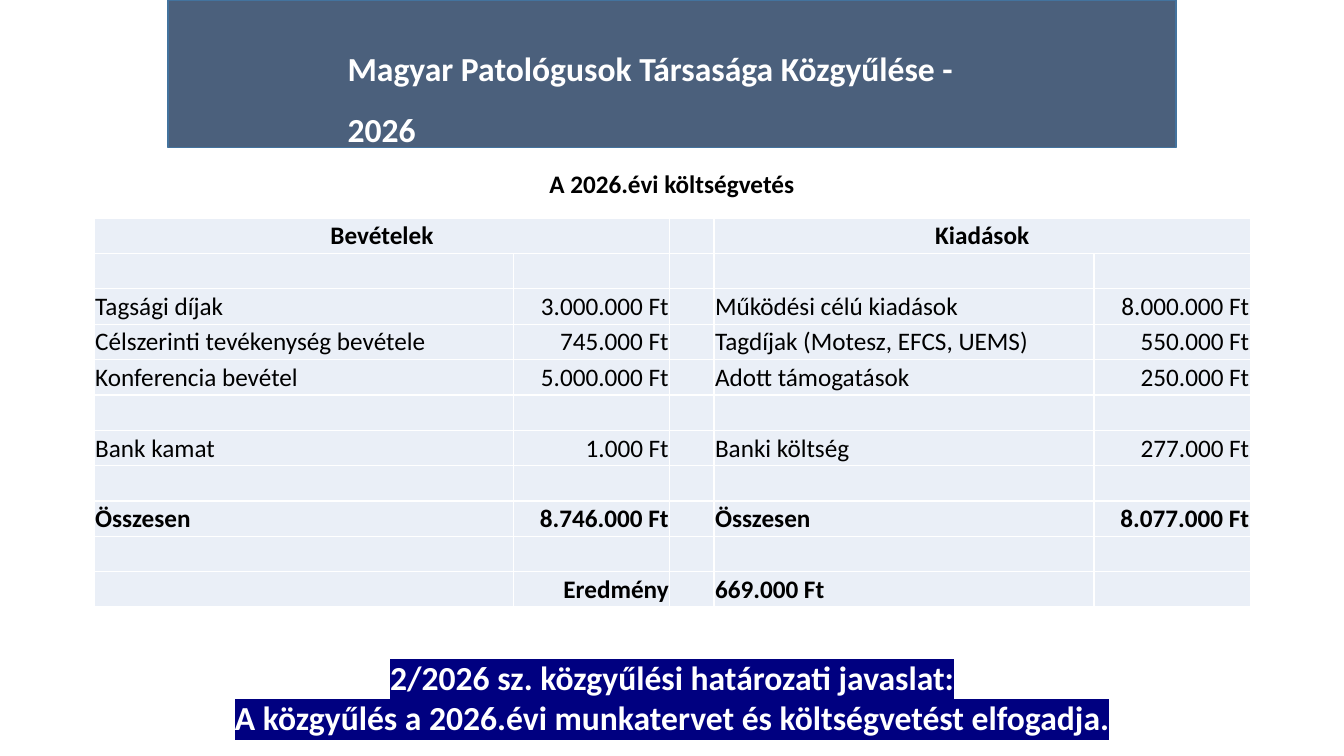
from lxml.etree import SubElement, Element
from pptx import Presentation
from pptx.dml.color import RGBColor
from pptx.enum.shapes import MSO_SHAPE as Preset
from pptx.enum.text import MSO_ANCHOR as Anchor, MSO_AUTO_SIZE as AutoSize, PP_ALIGN as Align
from pptx.oxml.ns import qn
from pptx.util import Pt

WHITE = RGBColor(0xFF, 0xFF, 0xFF)
BLACK = RGBColor(0x00, 0x00, 0x00)
SLATE = RGBColor(0x4B, 0x60, 0x7C)
BLUE_EDGE = RGBColor(0x43, 0x73, 0x9E)
PALE_BLUE = RGBColor(0xEA, 0xEF, 0xF7)
NAVY = RGBColor(0x00, 0x00, 0x80)

COLUMN_WIDTHS = [299.5, 111.6, 31.7, 271.4, 111.6]
ROW_HEIGHT = 25.27
BOLD_ROWS = {0, 8, 10}
BLANK = [""] * 5
BUDGET = [
    ["Bevételek", "", "", "Kiadások", ""],
    BLANK,
    ["Tagsági díjak", "3.000.000 Ft", "", "Működési célú kiadások", "8.000.000 Ft"],
    ["Célszerinti tevékenység bevétele", "745.000 Ft", "", "Tagdíjak (Motesz, EFCS, UEMS)", "550.000 Ft"],
    ["Konferencia bevétel", "5.000.000 Ft", "", "Adott támogatások", "250.000 Ft"],
    BLANK,
    ["Bank kamat", "1.000 Ft", "", "Banki költség", "277.000 Ft"],
    BLANK,
    ["Összesen", "8.746.000 Ft", "", "Összesen", "8.077.000 Ft"],
    BLANK,
    ["", "Eredmény", "", "669.000 Ft", ""],
]


class SlideBuilder:
    font_name = "Calibri"

    def __init__(self, page):
        self.page = page

    def style_font(self, font, size, color, bold):
        formats = {"name": self.font_name, "size": Pt(size), "bold": bold}
        for name, value in formats.items():
            setattr(font, name, value)
        font.color.rgb = color

    def banner(self, left, top, width, height):
        shape = self.page.shapes.add_shape(Preset.RECTANGLE, Pt(left), Pt(top), Pt(width), Pt(height))
        shape.shadow.inherit = False
        shape.fill.solid()
        shape.fill.fore_color.rgb = SLATE
        shape.line.color.rgb = BLUE_EDGE
        shape.line.width = Pt(1)

    def text(self, bounds, lines, size, color, align=Align.LEFT, spacing=1.0, wrap=True, highlight=None):
        box = self.page.shapes.add_textbox(*map(Pt, bounds))
        frame = box.text_frame
        frame.word_wrap = wrap
        frame.auto_size = AutoSize.SHAPE_TO_FIT_TEXT if not wrap else AutoSize.NONE
        for index, line in enumerate(lines):
            para = frame.add_paragraph() if index else frame.paragraphs[0]
            para.alignment = align
            para.line_spacing = spacing
            span = para.add_run()
            span.text = line
            self.style_font(span.font, size, color, True)
            if highlight is not None:
                marker = Element(qn("a:highlight"))
                SubElement(marker, qn("a:srgbClr"), val=str(highlight))
                span.font._element.find(qn("a:solidFill")).addnext(marker)

    def cell(self, cell, text, align, bold):
        margins = {"margin_left": 0.7, "margin_right": 0.7, "margin_top": 0.7, "margin_bottom": 0}
        for name, value in margins.items():
            setattr(cell, name, Pt(value))
        cell.vertical_anchor = Anchor.MIDDLE
        # Borders come before the fill in the cell properties
        properties = cell._tc.get_or_add_tcPr()
        for side in ("lnL", "lnR", "lnT", "lnB"):
            border = SubElement(properties, qn(f"a:{side}"), w=str(Pt(1)))
            paint = SubElement(border, qn("a:solidFill"))
            SubElement(paint, qn("a:srgbClr"), val=str(WHITE))
        cell.fill.solid()
        cell.fill.fore_color.rgb = PALE_BLUE
        para = cell.text_frame.paragraphs[0]
        para.alignment = align
        if text:
            para.add_run().text = text
        for font in [para.font] + [span.font for span in para.runs]:
            self.style_font(font, 18, BLACK, bold)

    def table(self, left, top, rows):
        frame = self.page.shapes.add_table(
            len(rows), len(COLUMN_WIDTHS), Pt(left), Pt(top),
            Pt(sum(COLUMN_WIDTHS)), Pt(ROW_HEIGHT * len(rows)))
        table = frame.table
        table.first_row = table.horz_banding = False
        for column, width in zip(table.columns, COLUMN_WIDTHS):
            column.width = Pt(width)
        for row_index, row in enumerate(rows):
            table.rows[row_index].height = Pt(ROW_HEIGHT)
            for column_index, text in enumerate(row):
                align = Align.RIGHT if column_index in (1, 4) else Align.LEFT
                if row_index == 0:
                    align = Align.CENTER
                self.cell(table.cell(row_index, column_index), text, align, row_index in BOLD_ROWS)
        # Each heading covers a label and an amount column
        for start in (0, 3):
            table.cell(0, start).merge(table.cell(0, start + 1))


def main():
    deck = Presentation()
    deck.slide_width, deck.slide_height = Pt(960), Pt(540)
    builder = SlideBuilder(deck.slides.add_slide(deck.slide_layouts[6]))

    # Header
    builder.banner(120, 0, 720, 105.5)
    builder.text((384.5, 116.6, 190.8, 28.8), ["A 2026.évi költségvetés"], 18, BLACK, Align.CENTER, wrap=False)
    builder.text((241.2, 16.6, 481, 46), ["Magyar Patológusok Társasága Közgyűlése - 2026"],
                 24, WHITE, spacing=1.5)

    # Budget
    builder.table(67.3, 155.8, BUDGET)

    # Proposed resolution
    builder.text((152.6, 465.8, 655.2, 65.5),
                 ["2/2026 sz. közgyűlési határozati javaslat:",
                  "A közgyűlés a 2026.évi munkatervet és költségvetést elfogadja."],
                 24, WHITE, Align.CENTER, highlight=NAVY)

    deck.save("out.pptx")


if __name__ == "__main__":
    main()
